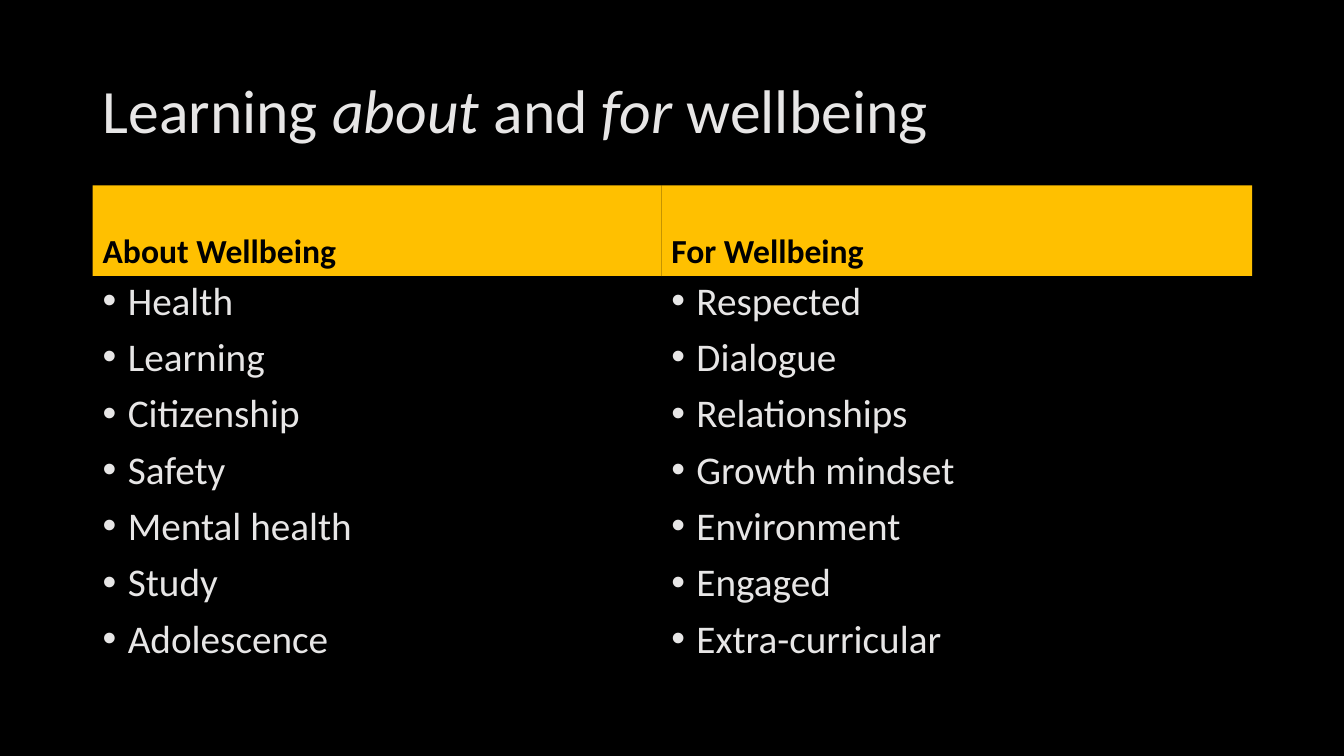
from dataclasses import dataclass

from lxml import etree
from pptx import Presentation
from pptx.dml.color import RGBColor
from pptx.enum.text import MSO_ANCHOR
from pptx.oxml.ns import qn
from pptx.util import Inches, Pt

TOP, MIDDLE, BOTTOM = MSO_ANCHOR.TOP, MSO_ANCHOR.MIDDLE, MSO_ANCHOR.BOTTOM


@dataclass(frozen=True)
class Theme:
    font: str = "Calibri"
    back: RGBColor = RGBColor(0x00, 0x00, 0x00)
    light: RGBColor = RGBColor(0xE7, 0xE6, 0xE6)
    gold: RGBColor = RGBColor(0xFF, 0xC0, 0x00)
    title: int = 44
    head: int = 24
    body: int = 28
    gap: int = 10
    indent: float = 0.25


class Deck:
    def __init__(self, theme, slide):
        self.theme = theme
        self.slide = slide
        fill = slide.background.fill
        fill.solid()
        fill.fore_color.rgb = theme.back

    def panel(self, area, lines, fill, color, size, anchor):
        """Add a filled text box with one paragraph per line."""
        box = self.slide.shapes.add_textbox(*map(Inches, area))
        box.fill.solid()
        box.fill.fore_color.rgb = fill
        frame = box.text_frame
        frame.word_wrap = True
        frame.vertical_anchor = anchor
        frame.text = "\n".join(lines)
        for i, para in enumerate(frame.paragraphs):
            para.line_spacing = 0.9
            if i:
                para.space_before = Pt(self.theme.gap)
            for run in para.runs:
                run.font.name = self.theme.font
                run.font.size = Pt(size)
                run.font.color.rgb = color
        return frame

    def title(self, area, parts):
        """Add the title; parts are pairs of text and italic flag."""
        t = self.theme
        frame = self.panel(area, [""], t.back, t.light, t.title, MIDDLE)
        for text, slant in parts:
            run = frame.paragraphs[0].add_run()
            run.text = text
            run.font.name = t.font
            run.font.size = Pt(t.title)
            run.font.color.rgb = t.light
            run.font.italic = slant

    def head(self, area, text):
        t = self.theme
        frame = self.panel(area, [text], t.gold, t.back, t.head, BOTTOM)
        frame.paragraphs[0].runs[0].font.bold = True

    def bullets(self, area, items):
        t = self.theme
        frame = self.panel(area, items, t.back, t.light, t.body, TOP)
        for para in frame.paragraphs:
            props = para._p.get_or_add_pPr()
            props.set("marL", str(Inches(t.indent)))
            props.set("indent", str(-Inches(t.indent)))
            etree.SubElement(props, qn("a:buFont")).set("typeface", "Arial")
            etree.SubElement(props, qn("a:buChar")).set("char", "•")


LEFT = 0.92
HEAD_TOP, HEAD_TALL = 1.84, 0.9
LIST_TOP, LIST_TALL = HEAD_TOP + HEAD_TALL, 4.03

TITLE = [("Learning ", False), ("about", True), (" and ", False),
         ("for", True), (" wellbeing", False)]

# Each column: width, heading, items
COLUMNS = [
    (5.64, "About Wellbeing",
     ["Health", "Learning", "Citizenship", "Safety", "Mental health",
      "Study", "Adolescence"]),
    (5.86, "For Wellbeing",
     ["Respected", "Dialogue", "Relationships", "Growth mindset",
      "Environment", "Engaged", "Extra-curricular"]),
]


def main():
    prs = Presentation()
    prs.slide_width, prs.slide_height = Inches(13.33), Inches(7.5)
    deck = Deck(Theme(), prs.slides.add_slide(prs.slide_layouts[6]))

    # Title
    deck.title((LEFT, 0.4, 11.5, 1.45), TITLE)

    # Two columns side by side
    left = LEFT
    for width, name, items in COLUMNS:
        deck.head((left, HEAD_TOP, width, HEAD_TALL), name)
        deck.bullets((left, LIST_TOP, width, LIST_TALL), items)
        left += width

    prs.save("out.pptx")


if __name__ == "__main__":
    main()
